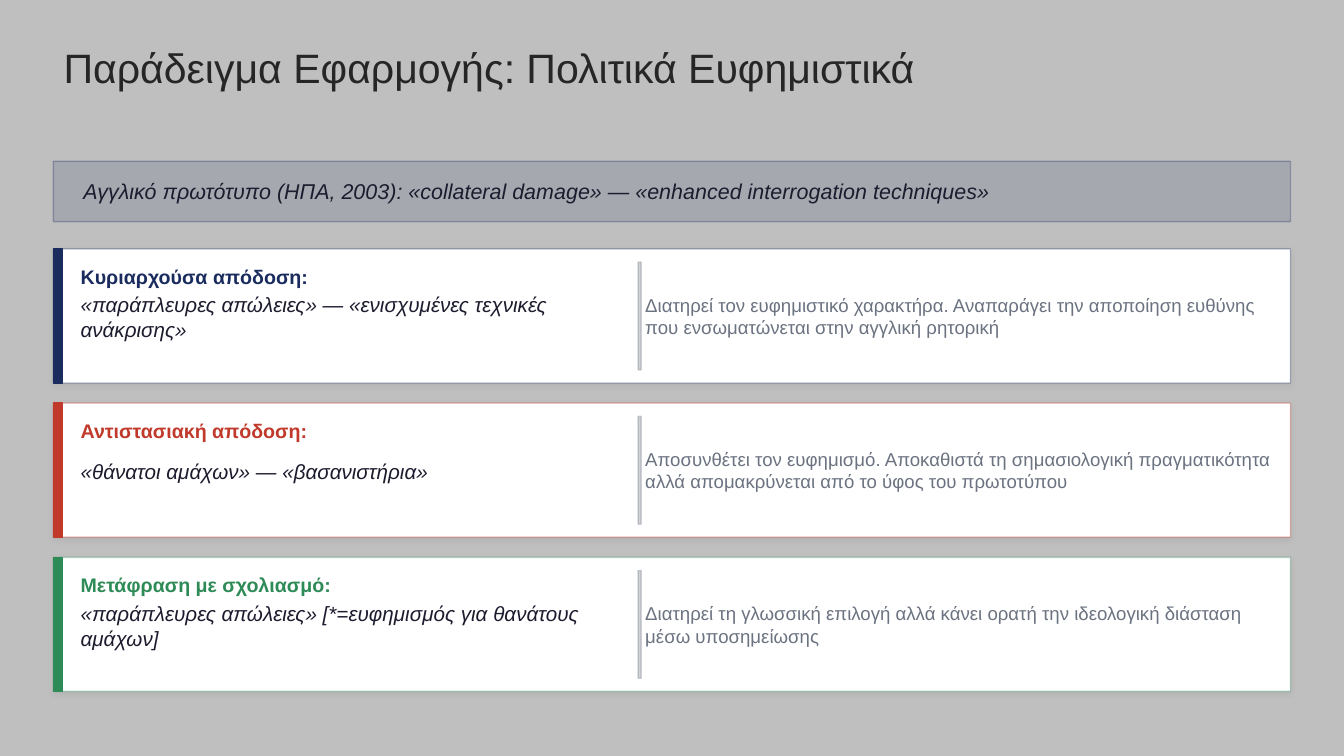
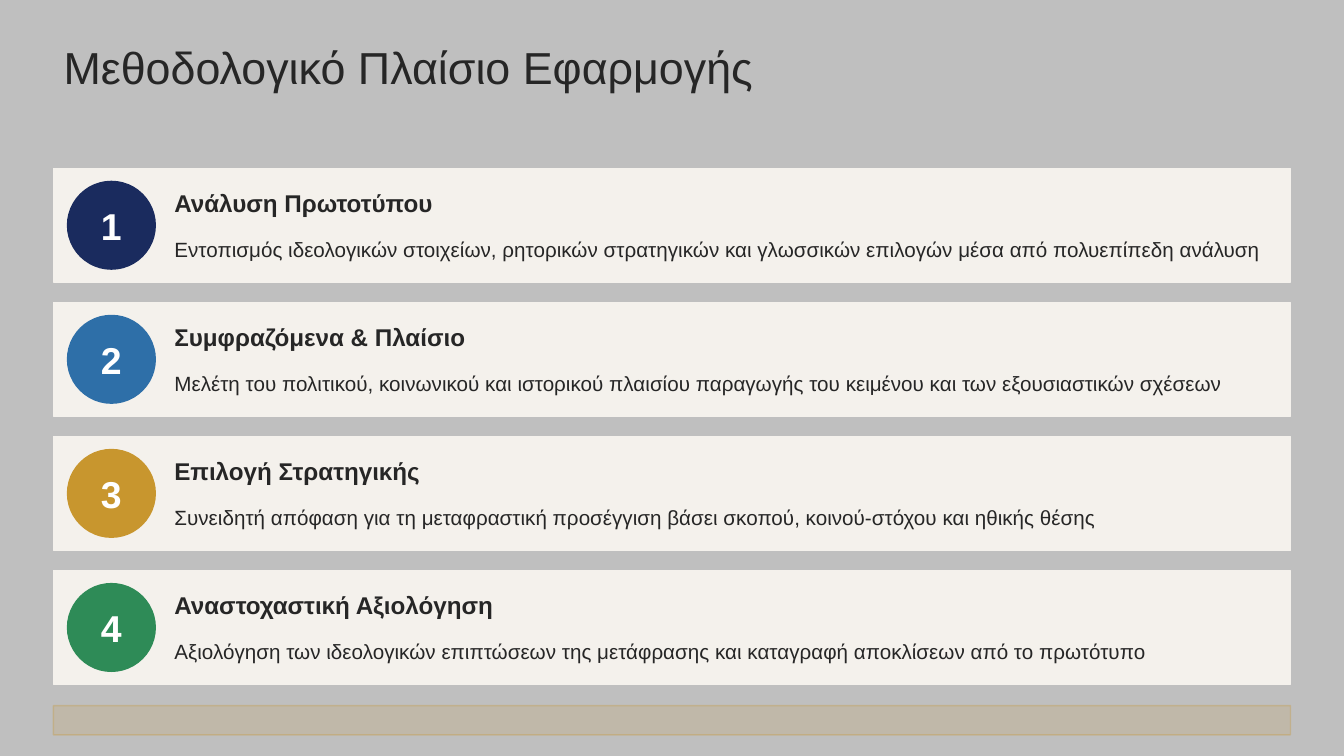
import pptx
import pptx.util
import pptx.dml.color
import pptx.enum.shapes
import pptx.enum.text
import pptx.oxml.ns
from lxml import etree

Inches = pptx.util.Inches
SHAPES = pptx.enum.shapes.MSO_SHAPE
ALIGN = pptx.enum.text.PP_ALIGN
qn = pptx.oxml.ns.qn

# Shared style
COLORS = {
    "background": "BFBFBF", "title": "262626", "ink": "1C1C2E", "muted": "6B7280",
    "navy": "1A2B5E", "red": "C0392B", "green": "2E8B57", "blue": "2E6FA8",
    "gold": "C8962E", "cream": "F4F1EC", "white": "FFFFFF", "black": "000000",
}
FONT = "Arial"
LEFT, WIDTH = 0.53, 12.27

# Content
EXAMPLE_TITLE = "Παράδειγμα Εφαρμογής: Πολιτικά Ευφημιστικά"
SOURCE_PHRASE = ("Αγγλικό πρωτότυπο (ΗΠΑ, 2003): «collateral damage» — "
                 "«enhanced interrogation techniques»")
RENDERINGS = [
    ("navy", "Κυριαρχούσα απόδοση:",
     "«παράπλευρες απώλειες» — «ενισχυμένες τεχνικές ανάκρισης»",
     "Διατηρεί τον ευφημιστικό χαρακτήρα. Αναπαράγει την αποποίηση ευθύνης "
     "που ενσωματώνεται στην αγγλική ρητορική"),
    ("red", "Αντιστασιακή απόδοση:",
     "«θάνατοι αμάχων» — «βασανιστήρια»",
     "Αποσυνθέτει τον ευφημισμό. Αποκαθιστά τη σημασιολογική πραγματικότητα "
     "αλλά απομακρύνεται από το ύφος του πρωτοτύπου"),
    ("green", "Μετάφραση με σχολιασμό:",
     "«παράπλευρες απώλειες» [*=ευφημισμός για θανάτους αμάχων]",
     "Διατηρεί τη γλωσσική επιλογή αλλά κάνει ορατή την ιδεολογική διάσταση "
     "μέσω υποσημείωσης"),
]
METHOD_TITLE = "Μεθοδολογικό Πλαίσιο Εφαρμογής"
STEPS = [
    ("navy", "Ανάλυση Πρωτοτύπου",
     "Εντοπισμός ιδεολογικών στοιχείων, ρητορικών στρατηγικών και γλωσσικών "
     "επιλογών μέσα από πολυεπίπεδη ανάλυση"),
    ("blue", "Συμφραζόμενα & Πλαίσιο",
     "Μελέτη του πολιτικού, κοινωνικού και ιστορικού πλαισίου παραγωγής του "
     "κειμένου και των εξουσιαστικών σχέσεων"),
    ("gold", "Επιλογή Στρατηγικής",
     "Συνειδητή απόφαση για τη μεταφραστική προσέγγιση βάσει σκοπού, "
     "κοινού-στόχου και ηθικής θέσης"),
    ("green", "Αναστοχαστική Αξιολόγηση",
     "Αξιολόγηση των ιδεολογικών επιπτώσεων της μετάφρασης και καταγραφή "
     "αποκλίσεων από το πρωτότυπο"),
]


# Helpers
def rgb(name):
    return pptx.dml.color.RGBColor.from_string(COLORS[name])


def set_alpha(color_format_parent, percent):
    color = color_format_parent.find(qn("a:solidFill")).find(qn("a:srgbClr"))
    etree.SubElement(color, qn("a:alpha"), val=str(percent * 1000))


def write(holder, text, size, color="title", bold=False, italic=False,
          align=ALIGN.LEFT, inset=0):
    frame = holder.text_frame
    frame.word_wrap = True
    frame.auto_size = pptx.enum.text.MSO_AUTO_SIZE.NONE
    frame.vertical_anchor = pptx.enum.text.MSO_ANCHOR.MIDDLE
    frame.margin_left = frame.margin_right = Inches(inset)
    frame.margin_top = frame.margin_bottom = Inches(inset / 2)
    paragraph = frame.paragraphs[0]
    paragraph.alignment = align
    run = paragraph.add_run()
    run.text = text
    font = run.font
    font.name, font.size, font.bold, font.italic = FONT, pptx.util.Pt(size), bold, italic
    font.color.rgb = rgb(color)


def add_text(slide, box, text, size, **style):
    write(slide.shapes.add_textbox(*map(Inches, box)), text, size, **style)


def add_block(slide, box, fill, line=None, kind=SHAPES.RECTANGLE,
              fill_alpha=None, line_alpha=None):
    block = slide.shapes.add_shape(kind, *map(Inches, box))
    block.shadow.inherit = False
    block.fill.solid()
    block.fill.fore_color.rgb = rgb(fill)
    block.line.color.rgb = rgb(line or fill)
    block.line.width = pptx.util.Pt(1)
    properties = block._element.spPr
    if fill_alpha:
        set_alpha(properties, fill_alpha)
    if line_alpha:
        set_alpha(properties.find(qn("a:ln")), line_alpha)
    return block


def add_soft_shadow(block):
    effects = block._element.spPr.find(qn("a:effectLst"))
    shadow = etree.SubElement(effects, qn("a:outerShdw"), blurRad="50800", dist="12700",
                              dir="8100000", algn="bl", rotWithShape="0")
    color = etree.SubElement(shadow, qn("a:srgbClr"), val=COLORS["black"])
    etree.SubElement(color, qn("a:alpha"), val="6000")


def add_titled_slide(deck, title, size):
    slide = deck.slides.add_slide(deck.slide_layouts[5])
    heading = slide.shapes.title
    heading.left, heading.top = Inches(LEFT), Inches(0)
    heading.width, heading.height = Inches(WIDTH), Inches(1.33)
    write(heading, title, size, inset=0.1)
    return slide


# Slide with three renderings of one phrase
def build_example(deck):
    slide = add_titled_slide(deck, EXAMPLE_TITLE, 29.3)
    add_block(slide, (LEFT, 1.6, WIDTH, 0.6), "navy", fill_alpha=15, line_alpha=30)
    add_text(slide, (0.73, 1.63, 12, 0.53), SOURCE_PHRASE, 15.3,
             color="ink", italic=True, inset=0.1)

    first_top, height, gap = 2.47, 1.33, 0.2
    for row, (accent, label, rendering, effect) in enumerate(RENDERINGS):
        top = first_top + row * (height + gap)
        card = add_block(slide, (LEFT, top, WIDTH, height), "white", accent, line_alpha=30)
        add_soft_shadow(card)
        add_block(slide, (LEFT, top, 0.09, height), accent)
        add_text(slide, (0.8, top + 0.07, 3.2, 0.4), label, 14, color=accent, bold=True)
        add_text(slide, (0.8, top + 0.44, 5.33, 0.47), rendering, 14.7,
                 color="ink", italic=True)
        add_text(slide, (6.4, top + 0.13, 6.27, 1.07), effect, 13.3, color="muted")
        add_block(slide, (6.33, top + 0.13, 0.03, 1.07), "muted",
                  fill_alpha=30, line_alpha=30)


# Slide with four numbered steps
def build_method(deck):
    slide = add_titled_slide(deck, METHOD_TITLE, 32)
    first_top, height, gap = 1.67, 1.13, 0.2
    for row, (accent, step, detail) in enumerate(STEPS):
        top = first_top + row * (height + gap)
        add_block(slide, (LEFT, top, WIDTH, height), "cream")
        badge = add_block(slide, (0.67, top + 0.13, 0.87, 0.87), accent, kind=SHAPES.OVAL)
        write(badge, str(row + 1), 26.7, color="white", bold=True, align=ALIGN.CENTER)
        add_text(slide, (1.73, top + 0.11, 10.53, 0.47), step, 17.3, bold=True)
        add_text(slide, (1.73, top + 0.54, 10.8, 0.53), detail, 14.7)
    add_block(slide, (LEFT, 7, WIDTH, 0.29), "gold", fill_alpha=15, line_alpha=30)


def main():
    deck = pptx.Presentation()
    deck.slide_width, deck.slide_height = Inches(13.33), Inches(7.5)
    backdrop = deck.slide_master.background.fill
    backdrop.solid()
    backdrop.fore_color.rgb = rgb("background")
    build_example(deck)
    build_method(deck)
    deck.save("out.pptx")


if __name__ == "__main__":
    main()
